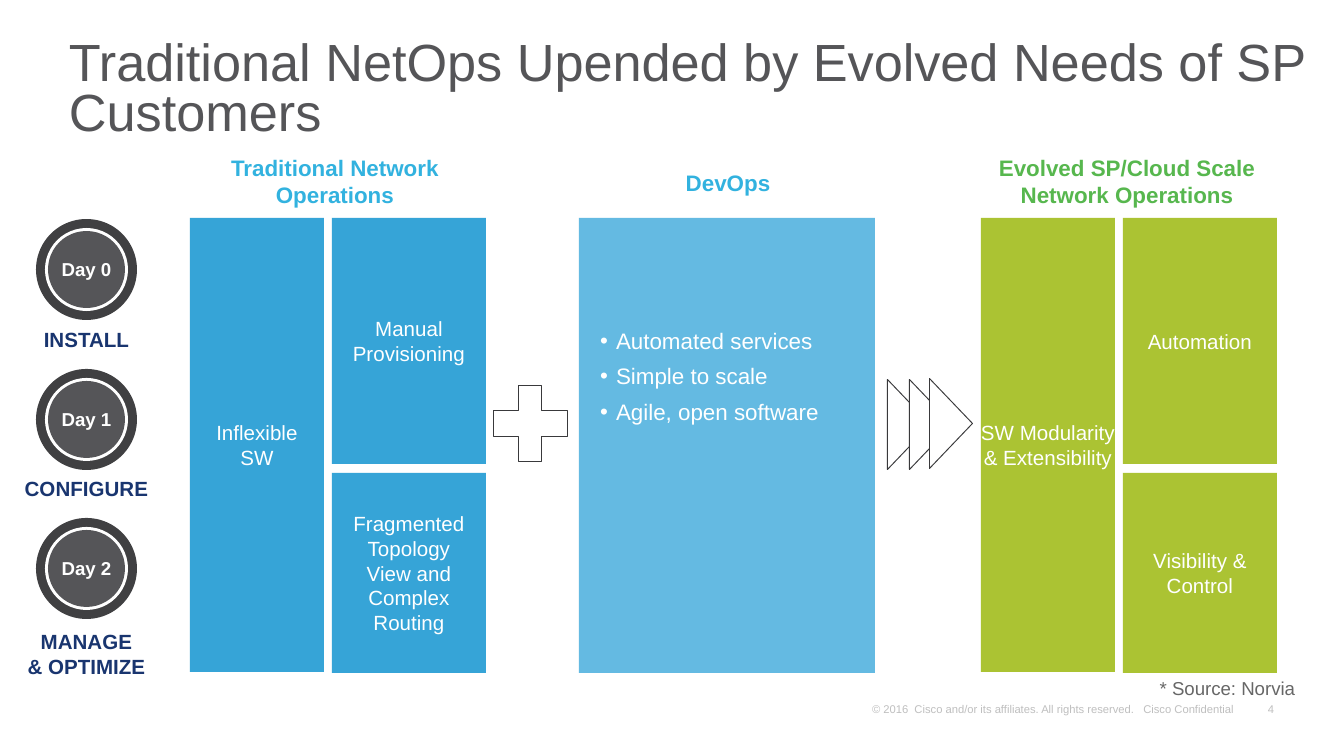
from lxml.etree import SubElement
from pptx import Presentation
from pptx.dml.color import RGBColor
from pptx.enum.shapes import MSO_SHAPE as Preset
from pptx.enum.text import MSO_ANCHOR as Anchor, MSO_AUTO_SIZE as AutoSize, PP_ALIGN as Align
from pptx.oxml.ns import qn
from pptx.util import Emu, Pt

EMU_PER_PX = 9144000 / 1344
FONT = "Arial"
WHITE, OUTLINE, GREY = "FFFFFF", "39393B", "555558"
BLUE, SKY, GREEN = "36A4D7", "64BAE2", "ABC333"
NAVY, HEAD_BLUE, HEAD_GREEN = "19356F", "32B2DF", "57B74E"
FOOTER_GREY, SOURCE_GREY = "BFBFBF", "676767"
TOP = 218


def px(value):
    return Emu(round(value * EMU_PER_PX))


def color(code):
    return RGBColor.from_string(code)


def place(item, left, top, width, height):
    item.left, item.top = px(left), px(top)
    item.width, item.height = px(width), px(height)


def set_frame(frame, anchor, margins=(13, 7), wrap=True):
    """Set anchor, wrapping and the (side, top and bottom) margins."""
    frame.auto_size = AutoSize.NONE
    frame.vertical_anchor = anchor
    frame.word_wrap = wrap
    frame.margin_left = frame.margin_right = px(margins[0])
    frame.margin_top = frame.margin_bottom = px(margins[1])


def write(frame, lines, size, code, bold=False, align=Align.CENTER):
    """Write one paragraph per line and return the paragraphs."""
    for index, line in enumerate(lines):
        para = frame.add_paragraph() if index else frame.paragraphs[0]
        para.alignment = align
        span = para.add_run()
        span.text = line
        span.font.name = FONT
        span.font.size = Pt(size)
        span.font.bold = bold
        span.font.color.rgb = color(code)
    return frame.paragraphs


def add_label(page, bounds, lines, size, code, bold=False, align=Align.CENTER,
              anchor=Anchor.MIDDLE, margins=(13, 7), wrap=True):
    box = page.shapes.add_textbox(*map(px, bounds))
    set_frame(box.text_frame, anchor, margins, wrap)
    return write(box.text_frame, lines, size, code, bold, align)


def add_preset(page, preset, bounds, fill=None, line=None):
    shape = page.shapes.add_shape(preset, *map(px, bounds))
    shape.shadow.inherit = False
    if fill:
        shape.fill.solid()
        shape.fill.fore_color.rgb = color(fill)
    else:
        shape.fill.background()
    if line:
        shape.line.color.rgb = color(line)
        shape.line.width = Pt(0.5)
    else:
        shape.line.fill.background()
    return shape


def add_tile(page, bounds, fill, lines, side_margin=13):
    tile = add_preset(page, Preset.RECTANGLE, bounds, fill)
    set_frame(tile.text_frame, Anchor.MIDDLE, (side_margin, 7))
    write(tile.text_frame, lines, 11, WHITE)


def add_tile_trio(page, left, fill, tall, upper, lower, tall_margin=13):
    """Add one tall tile with two stacked tiles on its right."""
    add_tile(page, (left, TOP, 134, 454), fill, tall, tall_margin)
    add_tile(page, (left + 142, TOP, 154, 246), fill, upper)
    add_tile(page, (left + 142, TOP + 255, 154, 200), fill, lower)


def add_badge(page, top, day, caption, caption_top, caption_height):
    left = 36
    for inset, fill in ((0, "404042"), (9, WHITE), (12, GREY)):
        side = 101 - 2 * inset
        add_preset(page, Preset.OVAL, (left + inset, top + inset, side, side), fill)
    add_label(page, (left + 12, top + 32, 77, 36), [day], 10, WHITE, True, wrap=False)
    add_label(page, (4, caption_top, 165, caption_height), caption, 11, NAVY, True, wrap=False)


def add_bullets(page, bounds, lines):
    paras = add_label(page, bounds, lines, 12, WHITE, align=Align.LEFT, anchor=Anchor.TOP)
    for para in paras:
        props = para._p.get_or_add_pPr()
        props.set("marL", str(px(16)))
        props.set("indent", str(px(-16)))
        bullet_color = SubElement(props, qn("a:buClr"))
        SubElement(bullet_color, qn("a:srgbClr"), val=WHITE)
        SubElement(props, qn("a:buFont"), typeface=FONT)
        SubElement(props, qn("a:buChar"), char="•")
        para.line_spacing = 0.9
        para.space_after = Pt(6)


def add_title(page, text):
    title = page.shapes.title
    place(title, 60, 38, 1280, 107)
    set_frame(title.text_frame, Anchor.MIDDLE, (9, 5))
    write(title.text_frame, [text], 28, GREY, align=Align.LEFT)[0].line_spacing = 0.8


def add_footer(page):
    add_label(page, (1251, 697, 32, 23), ["4"], 6, FOOTER_GREY, align=Align.RIGHT,
              anchor=Anchor.BOTTOM, margins=(9, 4), wrap=False)
    add_label(page, (863, 697, 391, 23),
              ["© 2016  Cisco and/or its affiliates. All rights reserved.   Cisco Confidential"],
              6, FOOTER_GREY, align=Align.LEFT, anchor=Anchor.BOTTOM, margins=(9, 4))
    add_label(page, (1140, 672, 164, 32), ["* Source: Norvia"], 10, SOURCE_GREY,
              align=Align.RIGHT, anchor=Anchor.TOP, margins=(9, 5), wrap=False)


def add_symbols(page):
    """Add the plus sign and the three chevron-like triangles between the columns."""
    plus = add_preset(page, Preset.CROSS, (493, 385, 74, 77), line=OUTLINE)
    plus.adjustments[0] = 0.34
    for left, top in ((864, 403), (886, 403), (906, 402)):
        triangle = add_preset(page, Preset.ISOSCELES_TRIANGLE, (left, top, 90, 43), WHITE, OUTLINE)
        triangle.rotation = 90


def main():
    deck = Presentation()
    deck.slide_width, deck.slide_height = px(1344), px(756)
    page = deck.slides.add_slide(deck.slide_layouts[5])
    add_title(page, "Traditional NetOps Upended by Evolved Needs of SP Customers")
    add_footer(page)

    add_badge(page, 219, "Day 0", ["INSTALL"], 320, 39)
    add_badge(page, 369, "Day 1", ["CONFIGURE"], 469, 39)
    add_badge(page, 518, "Day 2", ["MANAGE", "& OPTIMIZE"], 622, 63)

    add_label(page, (187, 148, 296, 67), ["Traditional Network Operations"], 12, HEAD_BLUE, True)
    add_tile_trio(page, 190, BLUE, ["Inflexible", "SW"], ["Manual", "Provisioning"],
                  ["Fragmented Topology View and Complex Routing"])

    add_label(page, (573, 163, 310, 40), ["DevOps"], 12, HEAD_BLUE, True)
    add_preset(page, Preset.RECTANGLE, (579, TOP, 296, 455), SKY)
    add_bullets(page, (587, 323, 284, 110),
                ["Automated services", "Simple to scale", "Agile, open software"])

    add_label(page, (972, 148, 310, 67), ["Evolved SP/Cloud Scale", "Network Operations"],
              12, HEAD_GREEN, True)
    add_tile_trio(page, 981, GREEN, ["SW Modularity & Extensibility"], ["Automation"],
                  ["Visibility & Control"], tall_margin=0)

    add_symbols(page)
    deck.save("out.pptx")


if __name__ == "__main__":
    main()
